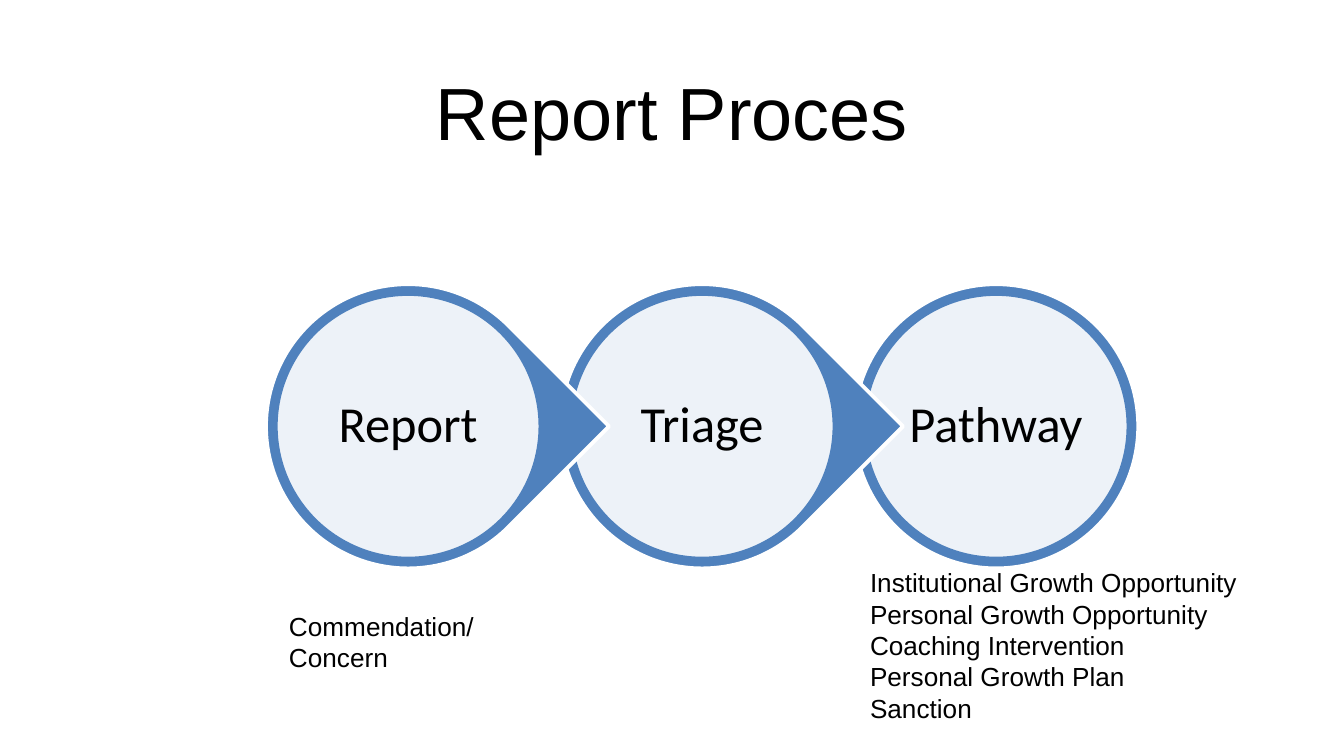
import pptx
import pptx.util
import pptx.dml.color
import pptx.enum.shapes
import pptx.enum.text
import pptx.oxml
import pptx.oxml.ns

PX = 9525  # EMU per px, 96 px to the inch
COLORS = {"blue": "4F81BD", "white": "FFFFFF", "text": "000000"}
SHAPE = pptx.enum.shapes.MSO_SHAPE
ALIGN = pptx.enum.text.PP_ALIGN
ANCHOR = pptx.enum.text.MSO_ANCHOR
AUTO = pptx.enum.text.MSO_AUTO_SIZE


def px(*values):
    return [pptx.util.Emu(v * PX) for v in values]


def rgb(name):
    return pptx.dml.color.RGBColor.from_string(COLORS[name])


class Deck:
    """Holds the text style and the current slide."""

    def __init__(self, prs, font):
        self.font = font
        self.slide = prs.slides.add_slide(prs.slide_layouts[5])

    def set_text(self, tf, lines, size, font=None, align=ALIGN.LEFT):
        tf.text = "\n".join(lines)
        for p in tf.paragraphs:
            p.alignment = align
            for r in p.runs:
                r.font.size = pptx.util.Pt(size)
                r.font.name = font or self.font
                r.font.color.rgb = rgb("text")

    def title(self, text, box, size):
        sp = self.slide.shapes.title
        sp.left, sp.top, sp.width, sp.height = px(*box)
        tf = sp.text_frame
        tf.auto_size = AUTO.NONE
        tf.vertical_anchor = ANCHOR.MIDDLE
        self.set_text(tf, [text], size, align=ALIGN.CENTER)

    def shape(self, parent, kind, box, fill, line, alpha=None):
        sp = parent.shapes.add_shape(kind, *px(*box))
        sp.shadow.inherit = False
        sp.fill.solid()
        sp.fill.fore_color.rgb = rgb(fill)
        sp.line.color.rgb = rgb(line)
        sp.line.width = pptx.util.Pt(2)
        if alpha:
            color = sp.element.spPr.find("./" + pptx.oxml.ns.qn("a:solidFill"))[0]
            color.append(pptx.oxml.parse_xml(
                f'<a:alpha {pptx.oxml.ns.nsdecls("a")} val="{alpha * 1000}"/>'))
        return sp

    def label(self, parent, text, box):
        tf = parent.shapes.add_textbox(*px(*box)).text_frame
        tf.word_wrap = True
        tf.vertical_anchor = ANCHOR.MIDDLE
        tf.margin_left, tf.margin_top, tf.margin_right, tf.margin_bottom = px(4, 4, 4, 4)
        self.set_text(tf, [text], 27, "Calibri", ALIGN.CENTER)
        tf.paragraphs[0].line_spacing = 0.9

    def step(self, parent, text, left, top, size, pointed):
        outer = self.shape(parent, SHAPE.TEAR if pointed else SHAPE.OVAL,
                           (left, top, size, size), "blue", "white")
        if pointed:
            outer.rotation = 45
        inset = 7
        self.shape(parent, SHAPE.OVAL,
                   (left + inset, top + inset, size - 2 * inset, size - 2 * inset),
                   "white", "blue", alpha=90)
        inset = 34
        self.label(parent, text,
                   (left + inset, top + inset, size - 2 * inset, size - 2 * inset))

    def note(self, lines, box, wrap):
        tf = self.slide.shapes.add_textbox(*px(*box)).text_frame
        tf.word_wrap = wrap
        tf.auto_size = AUTO.SHAPE_TO_FIT_TEXT
        self.set_text(tf, lines, 14)


def main():
    prs = pptx.Presentation()
    prs.slide_width, prs.slide_height = px(960, 540)
    deck = Deck(prs, "Arial")
    deck.title("Report Proces", (48, 47, 864, 64), 39.6)

    # Process steps, last one first so that each point overlaps the next circle
    steps = ["Report", "Triage", "Pathway"]
    group = deck.slide.shapes.add_group_shape()
    for i, text in reversed(list(enumerate(steps))):
        deck.step(group, text, 190 + 210 * i, 203, 203, pointed=i < len(steps) - 1)

    # Notes below the first and last steps
    deck.note(["Commendation/", "Concern"], (197, 431, 152, 55), wrap=False)
    deck.note(["Institutional Growth Opportunity", "Personal Growth Opportunity",
               "Coaching Intervention", "Personal Growth Plan", "Sanction"],
              (612, 400, 340, 123), wrap=True)
    prs.save("out.pptx")


if __name__ == "__main__":
    main()
